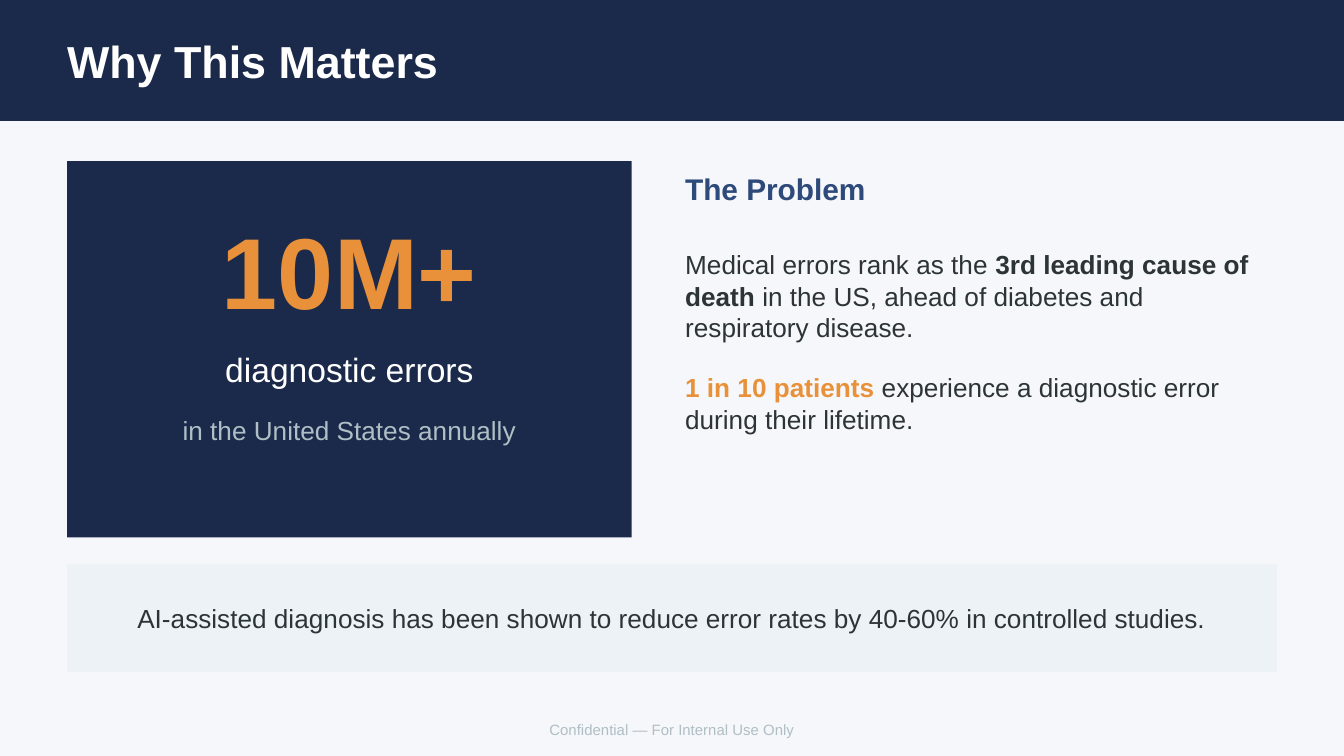
from pptx import Presentation
from pptx.dml.color import RGBColor
from pptx.enum.shapes import MSO_SHAPE
from pptx.enum.text import MSO_ANCHOR, PP_ALIGN
from pptx.util import Inches, Pt

RECT = MSO_SHAPE.RECTANGLE
MIDDLE = MSO_ANCHOR.MIDDLE
LEFT, CENTER = PP_ALIGN.LEFT, PP_ALIGN.CENTER
FONT = "Arial"
COLORS = {
    "background": "F5F7FA",
    "navy": "1B2A4A",
    "blue": "2E4A7A",
    "orange": "E8913A",
    "white": "FFFFFF",
    "gray": "B0BEC5",
    "text": "2D3436",
    "callout": "EDF2F7",
}


def rgb(name):
    return RGBColor.from_string(COLORS[name])


def add_panel(s, box, color):
    sp = s.shapes.add_shape(RECT, *map(Inches, box))
    sp.shadow.inherit = False
    sp.fill.solid()
    sp.fill.fore_color.rgb = rgb(color)
    sp.line.fill.background()


def add_text(s, box, runs, size, align=LEFT, margin=None):
    tf = s.shapes.add_textbox(*map(Inches, box)).text_frame
    frame_format = {"word_wrap": True, "vertical_anchor": MIDDLE}
    if margin is not None:
        for side in ("left", "top", "right", "bottom"):
            frame_format[f"margin_{side}"] = Inches(margin)
    for name, value in frame_format.items():
        setattr(tf, name, value)
    p = tf.paragraphs[0]
    p.alignment = align
    for text, color, bold in runs:
        r = p.add_run()
        r.text = text
        for name, value in {"name": FONT, "size": Pt(size), "bold": bold}.items():
            setattr(r.font, name, value)
        r.font.color.rgb = rgb(color)


def add_header(s):
    add_panel(s, (0, 0, 10, 0.9), "navy")
    add_text(s, (0.5, 0.2, 9, 0.5), [("Why This Matters", "white", True)], 24, margin=0)


def add_statistic(s):
    left, width = 0.5, 4.2
    add_panel(s, (left, 1.2, width, 2.8), "navy")
    lines = [
        (1.4, 1.2, "10M+", 54, "orange", True),
        (2.5, 0.5, "diagnostic errors", 18, "white", False),
        (3, 0.4, "in the United States annually", 14, "gray", False),
    ]
    for top, height, text, size, color, bold in lines:
        add_text(s, (left, top, width, height), [(text, color, bold)], size, CENTER)


def add_problem(s):
    left, width = 5, 4.5
    blocks = [
        (1.2, 0.4, 16, [("The Problem", "blue", True)]),
        (1.7, 1, 14, [
            ("Medical errors rank as the ", "text", False),
            ("3rd leading cause of death", "text", True),
            (" in the US, ahead of diabetes and respiratory disease.", "text", False),
        ]),
        (2.7, 0.6, 14, [
            ("1 in 10 patients", "orange", True),
            (" experience a diagnostic error during their lifetime.", "text", False),
        ]),
    ]
    for top, height, size, runs in blocks:
        add_text(s, (left, top, width, height), runs, size)


def add_callout(s):
    text = "AI-assisted diagnosis has been shown to reduce error rates by 40-60% in controlled studies."
    add_panel(s, (0.5, 4.2, 9, 0.8), "callout")
    add_text(s, (0.7, 4.35, 8.6, 0.5), [(text, "text", False)], 14, CENTER)


def add_footer(s):
    text = "Confidential — For Internal Use Only"
    add_text(s, (0.5, 5.3, 9, 0.25), [(text, "gray", False)], 8, CENTER)


def main():
    prs = Presentation()
    prs.slide_width = Inches(10)
    prs.slide_height = Inches(10) * 9 // 16
    s = prs.slides.add_slide(prs.slide_layouts[6])
    s.background.fill.solid()
    s.background.fill.fore_color.rgb = rgb("background")
    add_header(s)
    add_statistic(s)
    add_problem(s)
    add_callout(s)
    add_footer(s)
    prs.save("out.pptx")


if __name__ == "__main__":
    main()
